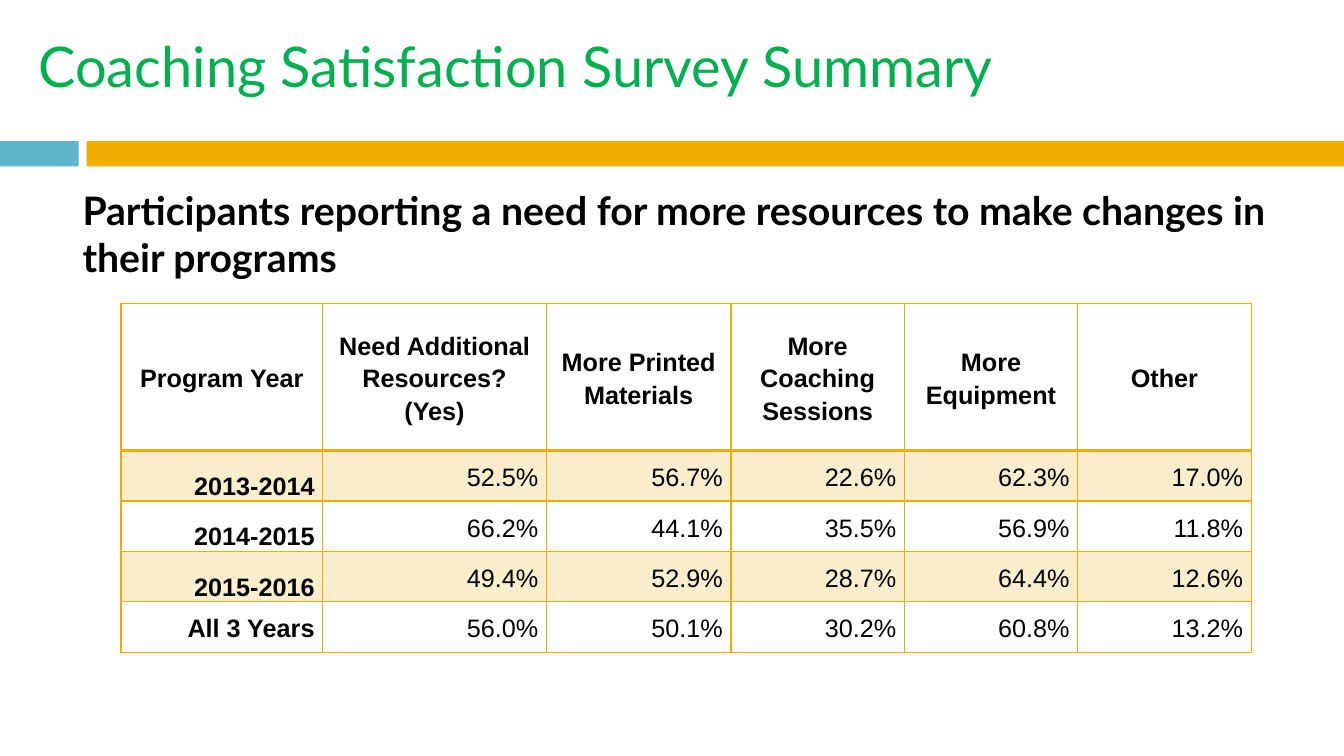
from lxml.etree import SubElement
from pptx import Presentation
from pptx.dml.color import RGBColor
from pptx.enum.shapes import MSO_SHAPE
from pptx.enum.text import MSO_ANCHOR, PP_ALIGN
from pptx.oxml import parse_xml
from pptx.oxml.ns import nsdecls, qn
from pptx.util import Inches, Pt

COLORS = {
    "title": "00B050",
    "text": "000000",
    "accent": "60B5CC",
    "gold": "F0AD00",
}
BAND_OPACITY = 20
BAR_TOP, BAR_HEIGHT = 1.4, 0.25
SLIDE_WIDTH, SLIDE_HEIGHT = 13.33, 7.5
COLUMN_WIDTHS = [2, 2.22, 1.83, 1.72, 1.72, 1.72]
HEADER_HEIGHT, ROW_HEIGHT = 1.46, 0.5
SURVEY = [
    ["Program Year", "Need Additional Resources? (Yes)", "More Printed Materials",
     "More Coaching Sessions", "More Equipment", "Other"],
    ["2013-2014", "52.5%", "56.7%", "22.6%", "62.3%", "17.0%"],
    ["2014-2015", "66.2%", "44.1%", "35.5%", "56.9%", "11.8%"],
    ["2015-2016", "49.4%", "52.9%", "28.7%", "64.4%", "12.6%"],
    ["All 3 Years", "56.0%", "50.1%", "30.2%", "60.8%", "13.2%"],
]


def color(name):
    return RGBColor.from_string(COLORS[name])


def set_font(paragraph, name, size, color_name, bold=False):
    paragraph.font.name = name
    paragraph.font.size = Pt(size)
    paragraph.font.bold = bold
    paragraph.font.color.rgb = color(color_name)


def set_frame(frame, anchor):
    frame.word_wrap = True
    frame.vertical_anchor = anchor
    frame.margin_left = frame.margin_right = Inches(0.1)
    frame.margin_top = frame.margin_bottom = Inches(0.1)


def add_bar(slide, left, width, color_name):
    bar = slide.shapes.add_shape(
        MSO_SHAPE.RECTANGLE, Inches(left), Inches(BAR_TOP), Inches(width), Inches(BAR_HEIGHT))
    bar.shadow.inherit = False
    bar.fill.solid()
    bar.fill.fore_color.rgb = color(color_name)
    bar.line.fill.background()


def format_title(slide, text):
    title = slide.shapes.title
    title.left, title.top = Inches(0.28), Inches(0.11)
    title.width, title.height = Inches(11.89), Inches(1.08)
    title.text_frame.text = text
    set_frame(title.text_frame, MSO_ANCHOR.MIDDLE)
    paragraph = title.text_frame.paragraphs[0]
    paragraph.alignment = PP_ALIGN.LEFT
    set_font(paragraph, "Lato", 40, "title")


def add_statement(slide, text):
    box = slide.shapes.add_textbox(Inches(0.6), Inches(1.75), Inches(12.35), Inches(1.2))
    set_frame(box.text_frame, MSO_ANCHOR.TOP)
    paragraph = box.text_frame.paragraphs[0]
    paragraph.text = text
    paragraph._p.get_or_add_pPr().set("marL", str(Inches(0.12)))
    set_font(paragraph, "Lato", 28, "text", bold=True)


def set_borders(cell, widths):
    properties = cell._tc.get_or_add_tcPr()
    for index, (side, width) in enumerate(widths.items()):
        properties.insert(index, parse_xml(
            f'<a:ln{side} {nsdecls("a")} w="{Pt(width)}"><a:solidFill>'
            f'<a:srgbClr val="{COLORS["gold"]}"/></a:solidFill></a:ln{side}>'))


def fill_cell(cell, banded):
    if not banded:
        cell.fill.background()
        return
    cell.fill.solid()
    cell.fill.fore_color.rgb = color("gold")
    fill_color = cell._tc.tcPr.find(".//" + qn("a:srgbClr"))
    SubElement(fill_color, qn("a:alpha")).set("val", str(BAND_OPACITY * 1000))


def format_cell(cell, text, row, column):
    is_header = row == 0
    is_banded = row % 2 == 1
    is_year = column == 0 and 0 < row < len(SURVEY) - 1
    cell.text = text
    cell.vertical_anchor = MSO_ANCHOR.BOTTOM if is_year else MSO_ANCHOR.MIDDLE
    cell.margin_left = cell.margin_right = Inches(0.08)
    cell.margin_top = cell.margin_bottom = 0
    paragraph = cell.text_frame.paragraphs[0]
    paragraph.alignment = PP_ALIGN.CENTER if is_header else PP_ALIGN.RIGHT
    paragraph.line_spacing = 1.15
    set_font(paragraph, "Arial", 18, "text", bold=is_header or column == 0)
    fill_cell(cell, is_banded)
    set_borders(cell, {"L": 1, "R": 1, "T": 2 if row == 1 else 1, "B": 2 if is_header else 1})


def add_survey_table(slide):
    heights = [HEADER_HEIGHT] + [ROW_HEIGHT] * (len(SURVEY) - 1)
    table = slide.shapes.add_table(
        len(SURVEY), len(COLUMN_WIDTHS), Inches(1.2), Inches(3.01),
        Inches(sum(COLUMN_WIDTHS)), Inches(sum(heights))).table
    table.first_row = table.horz_banding = False
    for column, width in zip(table.columns, COLUMN_WIDTHS):
        column.width = Inches(width)
    for row, height in zip(table.rows, heights):
        row.height = Inches(height)
    for row, values in enumerate(SURVEY):
        for column, text in enumerate(values):
            format_cell(table.cell(row, column), text, row, column)


def main():
    presentation = Presentation()
    presentation.slide_width = Inches(SLIDE_WIDTH)
    presentation.slide_height = Inches(SLIDE_HEIGHT)
    slide = presentation.slides.add_slide(presentation.slide_layouts[5])
    add_bar(slide, 0, 0.78, "accent")
    add_bar(slide, 0.86, SLIDE_WIDTH - 0.86, "gold")
    format_title(slide, "Coaching Satisfaction Survey Summary")
    add_statement(
        slide, "Participants reporting a need for more resources to make changes in their programs")
    add_survey_table(slide)
    presentation.save("out.pptx")


if __name__ == "__main__":
    main()
